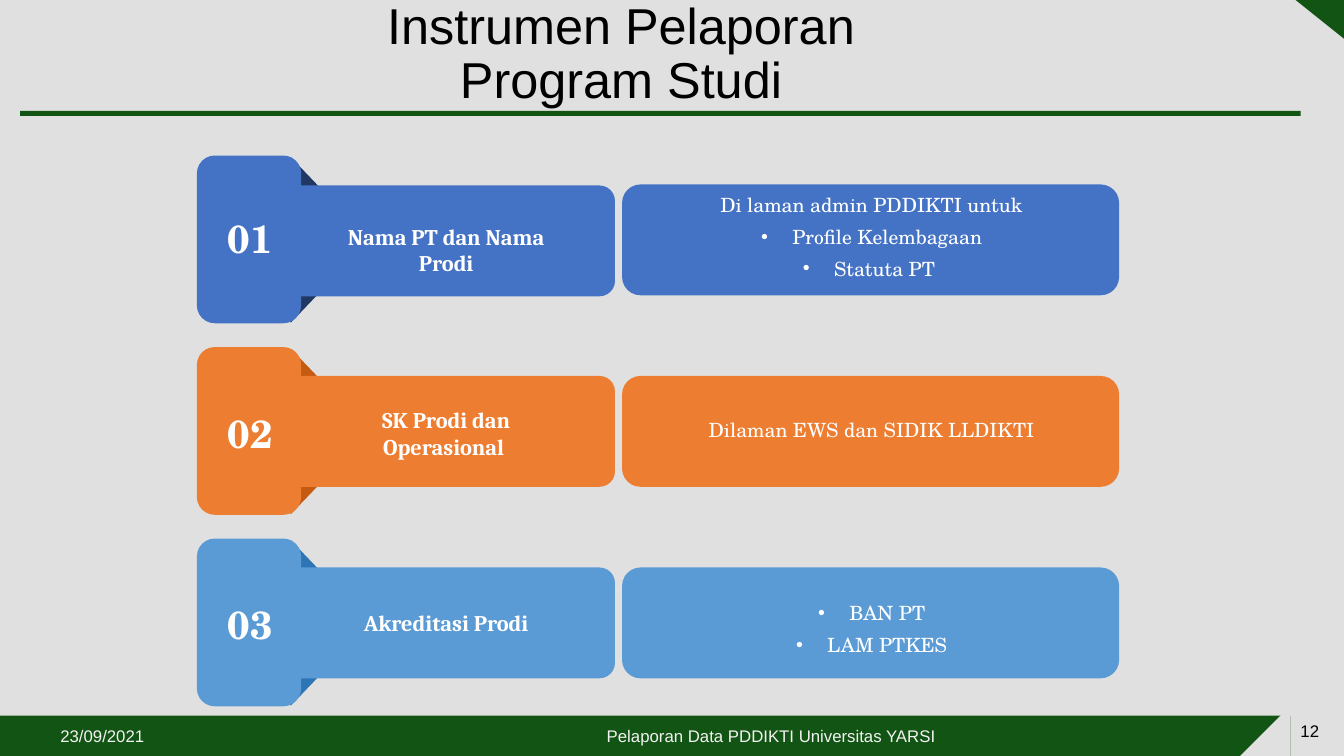
from pptx import Presentation
from pptx.dml.color import RGBColor
from pptx.enum.shapes import MSO_SHAPE
from pptx.enum.text import MSO_ANCHOR, PP_ALIGN
from pptx.util import Pt
from lxml.etree import SubElement
from pptx.oxml.ns import qn

PX = 9144  # 100 px to the inch
COLORS = {
    "bg": "E0E0E0", "green": "125413", "black": "000000", "white": "FFFFFF",
    "pale": "F2F2F2", "blue": "4472C4", "navy": "203864", "orange": "ED7D31",
    "rust": "C55A11", "sky": "5B9BD5", "steel": "2E75B6",
}
RECT, ROUND = MSO_SHAPE.RECTANGLE, MSO_SHAPE.ROUNDED_RECTANGLE
CORNER, TRIANGLE = MSO_SHAPE.RIGHT_TRIANGLE, MSO_SHAPE.ISOSCELES_TRIANGLE
CENTER, LEFT = PP_ALIGN.CENTER, PP_ALIGN.LEFT

prs = Presentation()
prs.slide_width, prs.slide_height = 1333 * PX, 750 * PX
s = prs.slides.add_slide(prs.slide_layouts[6])
s.background.fill.solid()
s.background.fill.fore_color.rgb = RGBColor.from_string(COLORS["bg"])


def add_box(kind, box, color, rotation=0, outline=False):
    sp = s.shapes.add_shape(kind, *[v * PX for v in box])
    sp.shadow.inherit = False
    sp.rotation = rotation
    sp.fill.solid()
    sp.fill.fore_color.rgb = RGBColor.from_string(COLORS[color])
    if outline:
        sp.line.color.rgb = RGBColor.from_string(COLORS[color])
        sp.line.width = Pt(1)
    else:
        sp.line.fill.background()
    return sp


def add_text(box, lines, font, color, align=CENTER, middle=False, inset=True, gap=0):
    sp = s.shapes.add_textbox(*[v * PX for v in box])
    tf = sp.text_frame
    tf.word_wrap = True
    tf.vertical_anchor = MSO_ANCHOR.MIDDLE if middle else MSO_ANCHOR.TOP
    if not inset:
        tf.margin_left = tf.margin_top = tf.margin_right = tf.margin_bottom = 0
    for i, line in enumerate(lines):
        p = tf.paragraphs[0] if i == 0 else tf.add_paragraph()
        p.alignment = align
        if i:
            p.space_before = Pt(gap)
        if line.startswith("•"):
            pPr = p._p.get_or_add_pPr()
            pPr.set("marL", str(31 * PX))
            pPr.set("indent", str(-31 * PX))
            SubElement(pPr, qn("a:buFont")).set("typeface", "Arial")
            SubElement(pPr, qn("a:buChar")).set("char", "•")
        r = p.add_run()
        r.text = line.lstrip("•")
        for name, value in font.items():
            setattr(r.font, name, value)
        r.font.color.rgb = RGBColor.from_string(COLORS[color])
    return tf


TITLE = {"name": "Arial", "size": Pt(36)}
SMALL = {"name": "Arial", "size": Pt(12)}
LABEL = {"name": "Cambria", "size": Pt(16), "bold": True}
NUMBER = {"name": "TeX Gyre Schola", "size": Pt(28), "bold": True}
DETAIL = {"name": "TeX Gyre Schola", "size": Pt(14)}

# Frame: footer band with slanted end, top corner, title rule
add_box(RECT, (0, 710, 1335, 40), "green")
add_box(RECT, (1280, 700, 55, 50), "bg")
add_box(CORNER, (1230, 700, 50, 50), "bg", 270)
add_box(CORNER, (1285, 0, 50, 40), "green", 180)
add_box(RECT, (20, 110, 1270, 5), "green")

# Title and footer texts
tf = add_text((360, 10, 512, 90), ["Instrumen Pelaporan Program Studi"],
              TITLE, "black", middle=True)
tf.paragraphs[0].line_spacing = 0.9
add_text((50, 720, 250, 20), ["23/09/2021"], SMALL, "pale", LEFT, True)
add_text((350, 720, 830, 20), ["Pelaporan Data PDDIKTI Universitas YARSI"],
         SMALL, "pale", middle=True)
add_text((1280, 700, 53, 50), ["12"], SMALL, "black", LEFT, True)

# Rows: colour, fold colour, number top, label, label top, details, details top
rows = [
    ("blue", "navy", 208, "Nama PT dan Nama Prodi", 221,
     ["Di laman admin PDDIKTI untuk", "•Profile Kelembagaan", "•Statuta PT "], 191),
    ("orange", "rust", 401, "SK Prodi dan Operasional ", 403,
     ["Dilaman EWS dan SIDIK LLDIKTI"], 415),
    ("sky", "steel", 591, "Akreditasi Prodi", 604,
     ["•BAN PT", "•LAM PTKES"], 596),
]
for i, (color, fold, number_y, label, label_y, details, details_y) in enumerate(rows):
    y = 155 + 190 * i
    # Detail card
    add_box(ROUND, (617, y + 28, 493, 110), color)
    add_text((635, details_y, 459, 88), details, DETAIL, "white", inset=False, gap=6)
    # Folds, label bar and number tab
    add_box(TRIANGLE, (255, y + 130, 67, 35), fold, 180)
    add_box(TRIANGLE, (255, y + 1, 67, 35), fold)
    bar = add_box(ROUND, (253, y + (29 if i == 0 else 28), 357, 110), color)
    bar.adjustments[0] = 0.14
    add_box(ROUND, (196, y, 102, 165), color, outline=True)
    add_text((318, label_y, 249, 54), [label], LABEL, "white", inset=False)
    add_text((213, number_y, 70, 53), [f"{i + 1:02d}"], NUMBER, "white")

prs.save("out.pptx")
